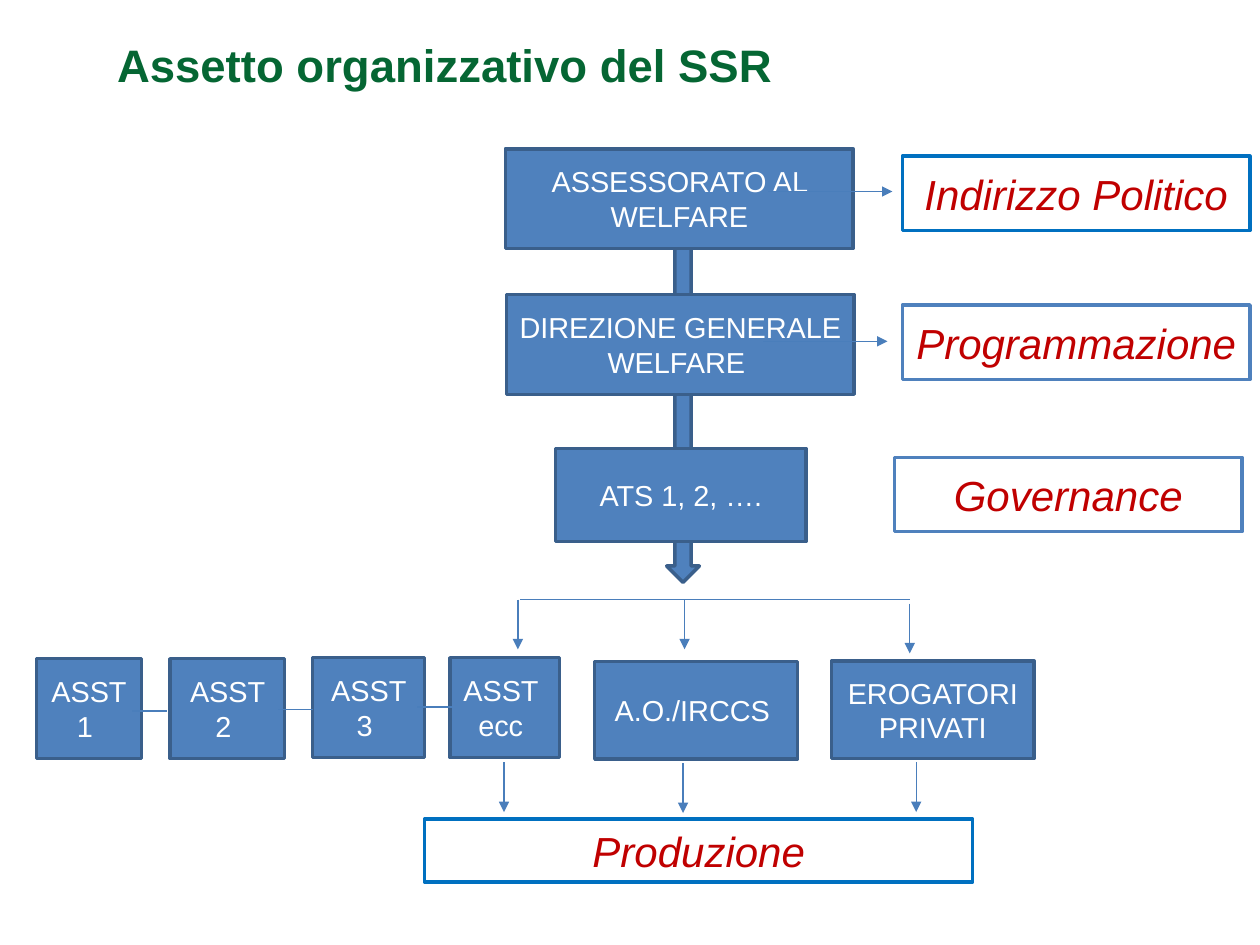
from lxml import etree
from pptx import Presentation
from pptx.dml.color import RGBColor
from pptx.enum.shapes import MSO_CONNECTOR, MSO_SHAPE
from pptx.enum.text import MSO_ANCHOR, PP_ALIGN
from pptx.oxml.ns import qn
from pptx.util import Cm, Pt

RECT = MSO_SHAPE.RECTANGLE
DOWN_ARROW = MSO_SHAPE.DOWN_ARROW
STRAIGHT = MSO_CONNECTOR.STRAIGHT
MIDDLE = MSO_ANCHOR.MIDDLE
LEFT, CENTER = PP_ALIGN.LEFT, PP_ALIGN.CENTER

COLORS = {
    "title": "056633",
    "fill": "4F81BD",
    "border": "3A5F8B",
    "bright": "0070C0",
    "link": "4A7EBB",
    "label": "C00000",
    "white": "FFFFFF",
}


def rgb(name):
    return RGBColor.from_string(COLORS[name])


def write(shape, text, size=16.5, color="white", bold=False, italic=False, align=CENTER):
    """Fill the shape with text, one paragraph per line."""
    tf = shape.text_frame
    tf.word_wrap = True
    tf.vertical_anchor = MIDDLE
    for i, line in enumerate(text.split("\n")):
        p = tf.add_paragraph() if i else tf.paragraphs[0]
        p.alignment = align
        r = p.add_run()
        r.text = line
        r.font.name = "Arial"
        r.font.size = Pt(size)
        r.font.bold = bold
        r.font.italic = italic
        r.font.color.rgb = rgb(color)


class Chart:
    """Style and current slide; all positions are in centimetres."""

    border_width = Pt(2)
    link_width = Pt(0.75)
    label_size = 24

    def __init__(self, slide):
        self.slide = slide

    def title(self, text, x, y, w, h):
        s = self.slide.shapes.add_textbox(Cm(x), Cm(y), Cm(w), Cm(h))
        write(s, text, size=26, color="title", bold=True, align=LEFT)

    def shape(self, kind, x, y, w, h, border="border", fill="fill"):
        s = self.slide.shapes.add_shape(kind, Cm(x), Cm(y), Cm(w), Cm(h))
        s.shadow.inherit = False
        if fill:
            s.fill.solid()
            s.fill.fore_color.rgb = rgb(fill)
        else:
            s.fill.background()
        s.line.color.rgb = rgb(border)
        s.line.width = self.border_width
        return s

    def unit(self, text, x, y, w, h):
        write(self.shape(RECT, x, y, w, h), text)

    def label(self, text, x, y, w=7.01, h=1.5, border="fill"):
        s = self.shape(RECT, x, y, w, h, border=border, fill=None)
        write(s, text, size=self.label_size, color="label", italic=True)

    def link(self, x, y, dx=0, dy=0, arrow=False):
        s = self.slide.shapes.add_connector(
            STRAIGHT, Cm(x), Cm(y), Cm(x + dx), Cm(y + dy))
        s.line.color.rgb = rgb("link")
        s.line.width = self.link_width
        if arrow:
            etree.SubElement(s.line._get_or_add_ln(), qn("a:tailEnd"), type="triangle")
        etree.SubElement(s._element.spPr, qn("a:effectLst"))


def main():
    prs = Presentation()
    prs.slide_width, prs.slide_height = Cm(25.4), Cm(19.05)
    chart = Chart(prs.slides.add_slide(prs.slide_layouts[6]))

    chart.title("Assetto organizzativo del SSR", 2.11, 0.25, 21.59, 2.08)
    chart.shape(DOWN_ARROW, 13.44, 4.98, 0.66, 6.76)

    for text, x, y, w, h in (
        ("ASSESSORATO AL WELFARE", 10.19, 3, 7.01, 2.01),
        ("DIREZIONE GENERALE WELFARE ", 10.21, 5.94, 7.01, 2.01),
        ("ATS 1, 2, ….", 11.2, 9.04, 5.05, 1.88),
        ("ASST1 ", 0.74, 13.28, 2.11, 2.01),
        ("ASST 2 ", 3.43, 13.28, 2.31, 2.01),
        ("ASST 3 ", 6.3, 13.26, 2.26, 2.01),
        ("ASST \necc ", 9.07, 13.26, 2.21, 2.01),
        ("A.O./IRCCS ", 11.99, 13.34, 4.09, 1.96),
        ("EROGATORI\nPRIVATI", 16.76, 13.33, 4.09, 1.96),
    ):
        chart.unit(text, x, y, w, h)

    chart.label("Indirizzo Politico", 18.19, 3.15, border="bright")
    chart.label("Programmazione", 18.19, 6.15)
    chart.label("Governance", 18.03, 9.22)
    chart.label("Produzione", 8.56, 16.51, w=11.05, h=1.27, border="bright")

    for x, y in ((15.49, 3.86), (15.39, 6.88)):
        chart.link(x, y, dx=2.5, arrow=True)

    chart.link(10.49, 12.09, dx=7.85)
    for x, y in (
        (10.44, 12.09), (13.8, 12.09), (18.34, 12.17),
        (10.16, 15.37), (13.77, 15.39), (18.47, 15.37),
    ):
        chart.link(x, y, dy=1, arrow=True)

    for x, y in ((2.67, 14.33), (5.61, 14.3), (8.41, 14.25)):
        chart.link(x, y, dx=0.7)

    prs.save("out.pptx")


if __name__ == "__main__":
    main()
